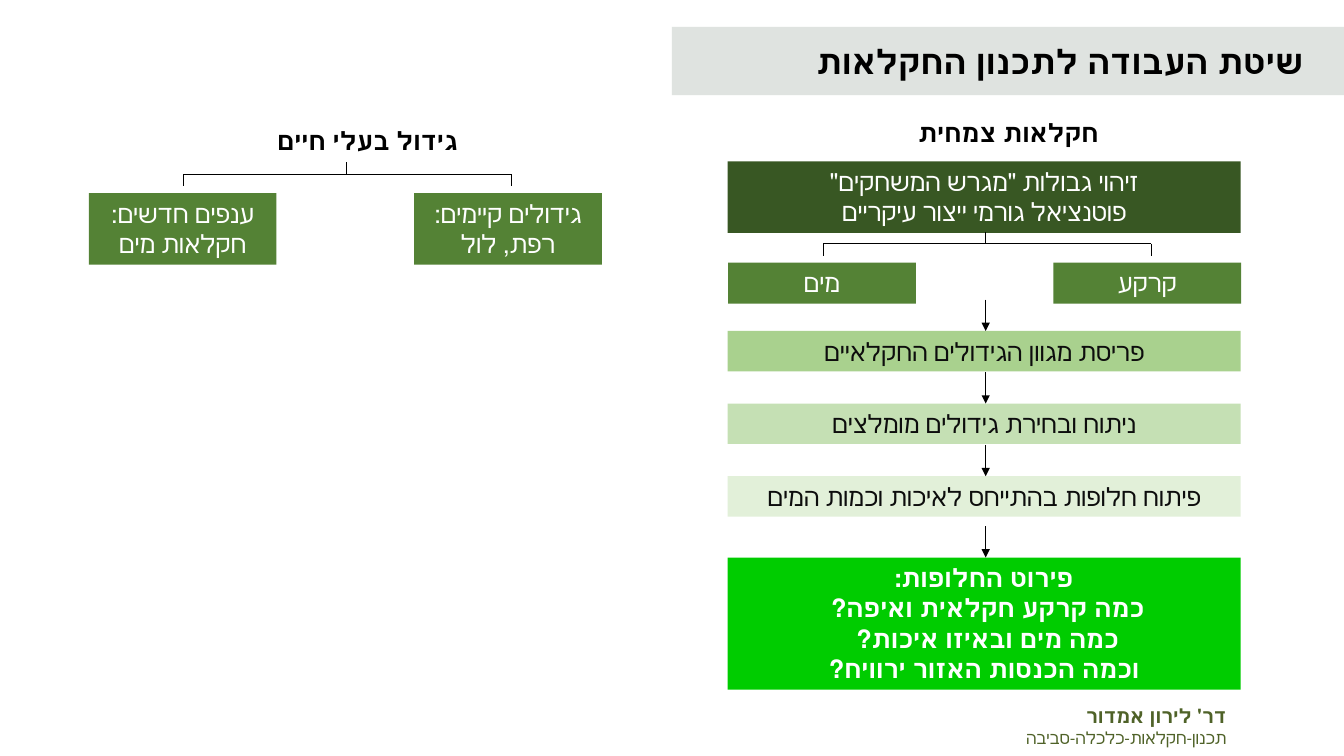
from lxml.etree import SubElement
from pptx import Presentation
from pptx.dml.color import RGBColor
from pptx.enum.lang import MSO_LANGUAGE_ID
from pptx.enum.shapes import MSO_CONNECTOR, MSO_SHAPE
from pptx.enum.text import MSO_ANCHOR, PP_ALIGN
from pptx.oxml.ns import qn
from pptx.util import Cm, Pt

BLACK = RGBColor(0, 0, 0)
WHITE = RGBColor(255, 255, 255)
INK = RGBColor(0x0D, 0x0D, 0x0D)
OLIVE = RGBColor(0x4F, 0x62, 0x28)
GREY = RGBColor(0xDD, 0xE1, 0xDE)
DARK = RGBColor(0x38, 0x57, 0x23)
GREEN = RGBColor(0x54, 0x82, 0x35)
LIGHT = RGBColor(0xA9, 0xD1, 0x8E)
PALE = RGBColor(0xC5, 0xE0, 0xB4)
FAINT = RGBColor(0xE2, 0xF0, 0xD9)
VIVID = RGBColor(0, 0xCC, 0)

TITLE = "שיטת העבודה לתכנון החקלאות"
CREDIT = ["דר' לירון אמדור", "תכנון-חקלאות-כלכלה-סביבה"]
# text, left, top
HEADS = [("חקלאות צמחית", 18.95, 2.82), ("גידול בעלי חיים", 2.8, 3.03)]
BOUNDS = 'זיהוי גבולות "מגרש המשחקים"\nפוטנציאל גורמי ייצור עיקריים'
# left of the pair, top, box height, (left text, right text)
PAIRS = [
    (18.35, 6.62, 1.03, ("מים", "קרקע")),
    (2.24, 4.87, 1.8, ("ענפים חדשים: חקלאות מים", "גידולים קיימים: רפת, לול")),
]
# stem, top
FORKS = [(24.84, 5.84), (8.72, 4.09)]
STEPS = [
    ("פריסת מגוון הגידולים החקלאיים", LIGHT),
    ("ניתוח ובחירת גידולים מומלצים", PALE),
    ("פיתוח חלופות בהתייחס לאיכות וכמות המים", FAINT),
]
DETAIL = ("פירוט החלופות:\nכמה קרקע חקלאית ואיפה? \n"
          "כמה מים ובאיזו איכות? \nוכמה הכנסות האזור ירוויח?")

LEFT, WIDE, ROW = 18.34, 12.93, 1.02
SMALL, SHIFT = 4.73, 8.2
STEP_TOP, PITCH, END_TOP = 8.34, 1.83, 14.05
AXIS, ARROW = 24.84, 0.79
ARM, DROP, SKEW = 4.13, 0.3, 0.04

deck = Presentation()
deck.slide_width, deck.slide_height = Cm(33.87), Cm(19.05)
slide = deck.slides.add_slide(deck.slide_layouts[6])


def write(shape, text, color, size=18, bold=False, font="Calibri",
          align=PP_ALIGN.CENTER, anchor=MSO_ANCHOR.TOP):
    """Fill a shape with right-to-left text, one paragraph a line."""
    frame = shape.text_frame
    frame.text = text
    frame.word_wrap = True
    frame.vertical_anchor = anchor
    for para in frame.paragraphs:
        para.alignment = align
        para._p.get_or_add_pPr().set("rtl", "1")
        for run in para.runs:
            run.font.name = font
            run.font.size = Pt(size)
            run.font.bold = bold
            run.font.color.rgb = color
            run.font.language_id = MSO_LANGUAGE_ID.HEBREW
    return frame


def add_box(x, y, w, h, fill):
    box = slide.shapes.add_shape(MSO_SHAPE.RECTANGLE, Cm(x), Cm(y), Cm(w), Cm(h))
    box.shadow.inherit = False
    box.fill.solid()
    box.fill.fore_color.rgb = fill
    box.line.fill.background()
    return box


def add_label(x, y, w, h):
    return slide.shapes.add_textbox(Cm(x), Cm(y), Cm(w), Cm(h))


def add_line(x1, y1, x2, y2, arrow=False):
    line = slide.shapes.add_connector(
        MSO_CONNECTOR.STRAIGHT, Cm(x1), Cm(y1), Cm(x2), Cm(y2))
    line.line.color.rgb = BLACK
    line.line.width = Pt(0.5)
    if arrow:
        SubElement(line.line._get_or_add_ln(), qn("a:tailEnd"), type="triangle")
    SubElement(line._element.spPr, qn("a:effectLst"))


def add_fork(stem, top):
    """Draw a stem that splits into two prongs."""
    bar, mid = top + DROP, stem + SKEW
    add_line(stem, top, stem, bar)
    add_line(mid - ARM, bar, mid + ARM, bar)
    for x in (mid - ARM, mid + ARM):
        add_line(x, bar, x, bar + DROP)


band = add_box(16.93, 0.68, 16.94, 1.72, GREY)
tint = band.fill._xPr.find(qn("a:solidFill"))[0]
SubElement(tint, qn("a:alpha"), val="93000")
frame = write(band, TITLE, BLACK, 24, True, "Roboto", PP_ALIGN.RIGHT, MSO_ANCHOR.MIDDLE)
frame.margin_right = Cm(1.02)
frame.paragraphs[0].space_before = Pt(12)

for text, x, y in HEADS:
    write(add_label(x, y, WIDE, ROW), text, BLACK, bold=True)

write(add_box(LEFT, 4.07, WIDE, 1.8, DARK), BOUNDS, WHITE)
for x, y, h, texts in PAIRS:
    for i, text in enumerate(texts):
        write(add_box(x + i * SHIFT, y, SMALL, h, GREEN), text, WHITE)
for stem, top in FORKS:
    add_fork(stem, top)

tops = [STEP_TOP + i * PITCH for i in range(len(STEPS))]
for y, (text, fill) in zip(tops, STEPS):
    write(add_box(LEFT, y, WIDE, ROW, fill), text, INK)
write(add_box(LEFT, END_TOP, WIDE, 3.33, VIVID), DETAIL, WHITE, bold=True)
for y in tops + [END_TOP]:
    add_line(AXIS, y - ARROW, AXIS, y, arrow=True)

frame = write(add_label(24.3, 17.6, 6.86, 1.37), "\n".join(CREDIT), OLIVE, 12,
              align=PP_ALIGN.RIGHT, anchor=MSO_ANCHOR.MIDDLE)
name = frame.paragraphs[0].runs[0].font
name.size, name.bold = Pt(14), True

deck.save("out.pptx")
